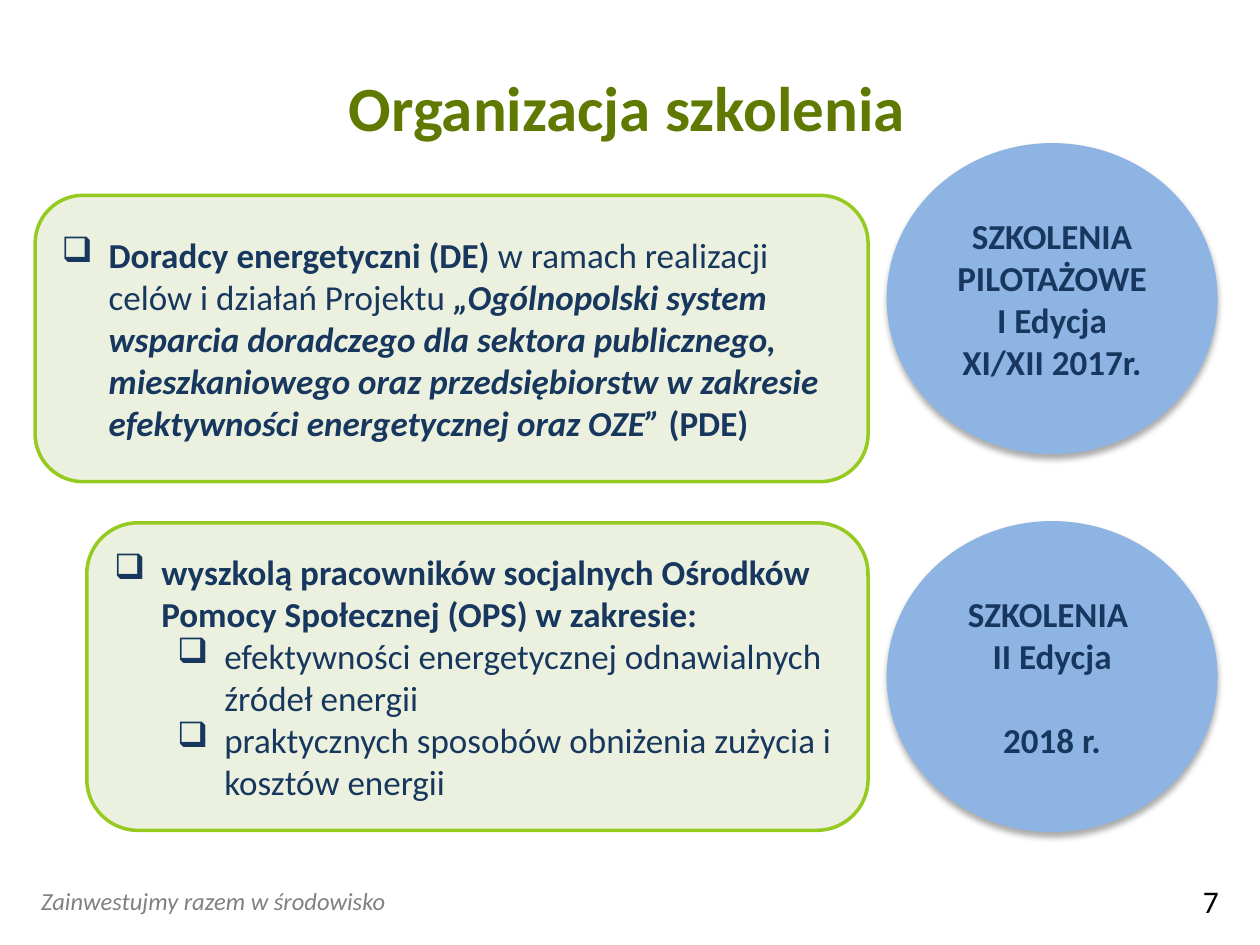
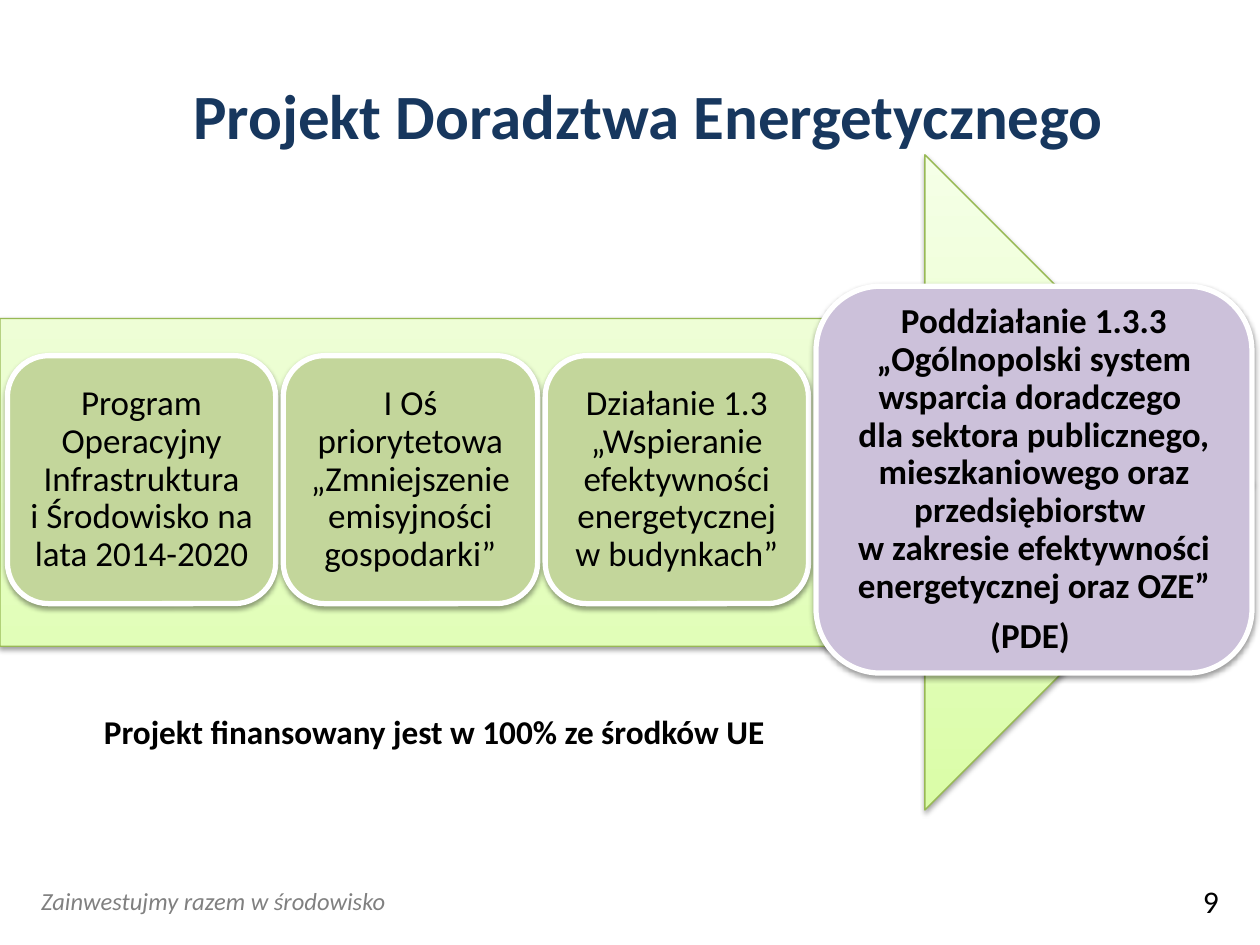
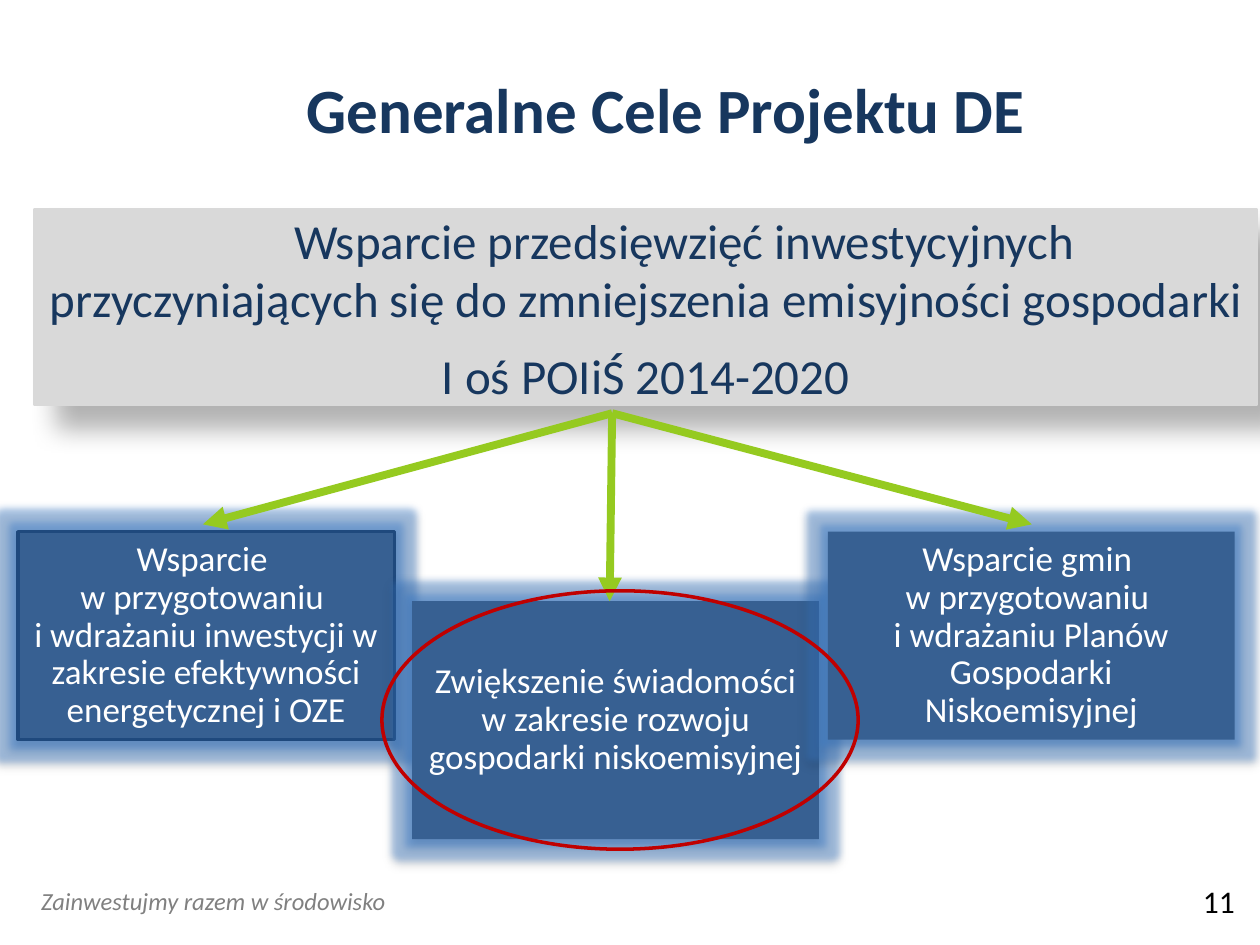
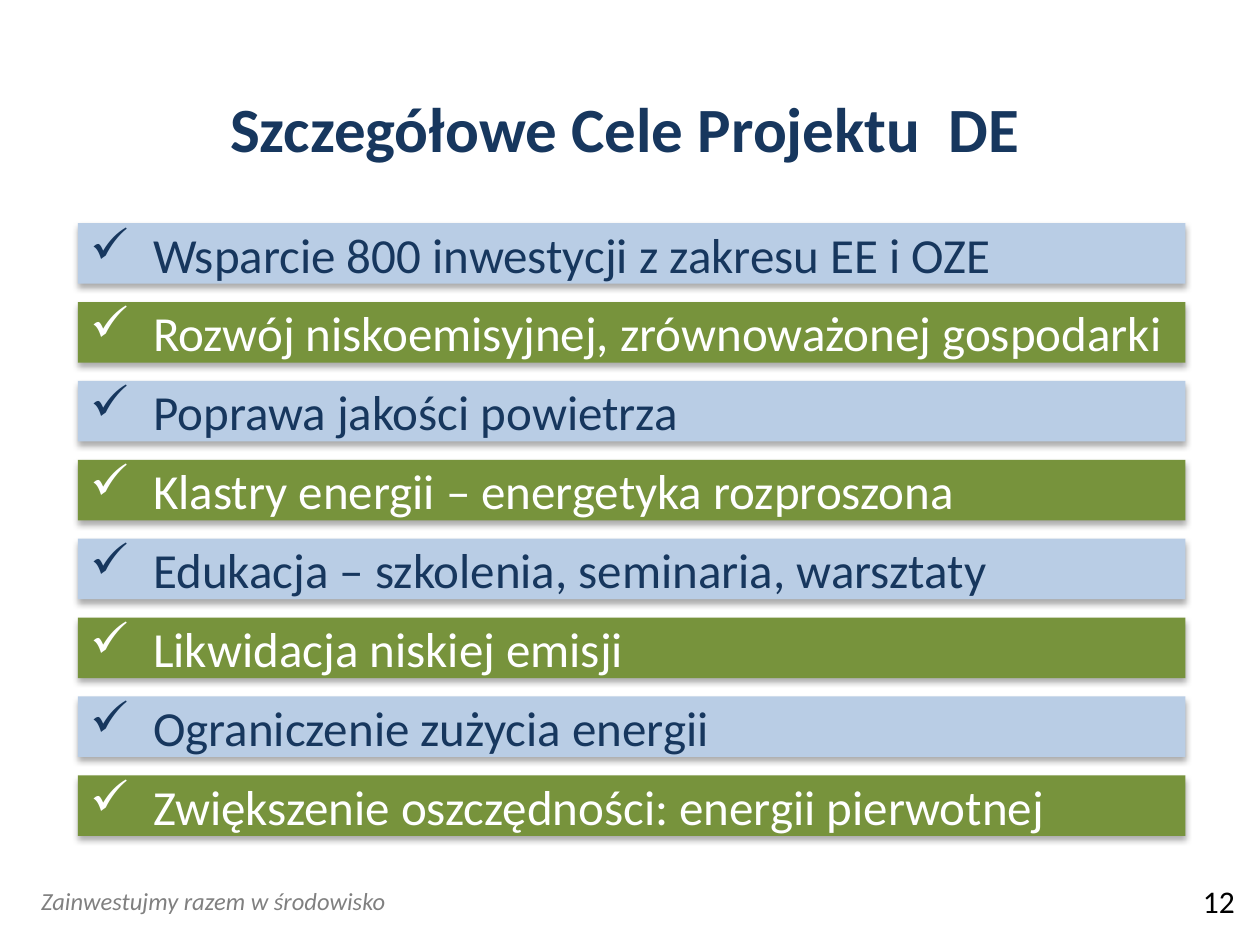
"""Build four slides on the energy advisory project and its training courses."""
from dataclasses import dataclass

import lxml.etree
import pptx
import pptx.dml.color
import pptx.enum.shapes
import pptx.enum.text
import pptx.oxml.ns
import pptx.util

Cm = pptx.util.Cm
Pt = pptx.util.Pt
ShapeType = pptx.enum.shapes.MSO_SHAPE
Align = pptx.enum.text.PP_ALIGN
Anchor = pptx.enum.text.MSO_ANCHOR
qn = pptx.oxml.ns.qn


@dataclass(frozen=True)
class Theme:
    font: str = "Calibri"
    navy: str = "17375E"
    olive: str = "5F7901"
    lime: str = "95CA20"
    pale_green: str = "EBF1DE"
    card_green: str = "C3D69B"
    card_purple: str = "CCC1DA"
    bar_green: str = "77933C"
    bar_blue: str = "B9CDE5"
    circle_blue: str = "8EB4E3"
    goal_blue: str = "376092"
    goal_edge: str = "1F497D"
    glow: str = "3A7CCB"
    banner_gray: str = "D9D9D9"
    footer_gray: str = "808080"
    arrow_edge: str = "98B955"
    arrow_dark: str = "DAFDA7"
    arrow_pale: str = "F5FFE7"
    red: str = "C00000"
    white: str = "FFFFFF"
    black: str = "000000"
    title_size: int = 36
    large_size: int = 28
    body_size: int = 20
    note_size: int = 19
    number_size: int = 18
    footer_size: int = 14


@dataclass(frozen=True)
class Shadow:
    opacity: int
    blur: float
    distance: float
    angle: int


@dataclass(frozen=True)
class Line:
    """Hold one paragraph: runs of (text, style letters) and its layout."""
    runs: tuple
    bullet: str = ""
    level: int = 0
    margin: float = 0
    indent: float = 0
    before: float = 0


THEME = Theme()
SOFT = Shadow(32, 3.5, 2.2, 90)
CARD = Shadow(38, 3.1, 1.6, 90)
DEEP = Shadow(30, 15, 18, 45)

FOOTER = "Zainwestujmy razem w środowisko"
FOOTER_BOX = (0.58, 17.73, 10.72, 0.86)
NUMBER_BOX = (24, 17.65, 1.4, 1.02)

HANGING = 0.95
TRAINING_BOXES = [
    ((1.75, 10.54, 15.75, 6.2), [
        Line((("wyszkolą pracowników socjalnych Ośrodków Pomocy Społecznej (OPS) w zakresie:", "b"),),
             "❑", 0, HANGING, -HANGING),
        Line((("efektywności energetycznej odnawialnych źródeł energii", ""),),
             "❑", 1, 2.22, -HANGING),
        Line((("praktycznych sposobów obniżenia zużycia i kosztów energii", ""),),
             "❑", 1, 2.22, -HANGING),
    ]),
    ((0.71, 3.94, 16.79, 5.77), [
        Line((("Doradcy energetyczni (DE) ", "b"),
              ("w ramach realizacji celów i działań Projektu ", ""),
              ("„Ogólnopolski system wsparcia doradczego dla sektora publicznego, mieszkaniowego "
               "oraz przedsiębiorstw w zakresie efektywności energetycznej oraz OZE” ", "bi"),
              ("(PDE)", "b")), "❑", 0, HANGING, -HANGING),
    ]),
]
TRAINING_CIRCLES = [
    (2.92, [Line((("SZKOLENIA PILOTAŻOWE", "b"),)), Line((("I Edycja", "b"),)),
            Line((("XI/XII 2017r.", "b"),))]),
    (10.54, [Line((("SZKOLENIA ", "b"),)), Line((("II Edycja", "b"),)),
             Line((("2018 r.", "b"),), before=24)]),
]

CARD_GAP = 0.15
CARD_MIDDLE = 9.67
PROGRAMME_CARDS = [
    (5.41, 5, THEME.card_green,
     [Line((("Program Operacyjny Infrastruktura\ni Środowisko na lata 2014-2020", ""),))]),
    (5.13, 5, THEME.card_green,
     [Line((("I Oś priorytetowa „Zmniejszenie emisyjności gospodarki”", ""),))]),
    (5.31, 5, THEME.card_green,
     [Line((("Działanie 1.3 „Wspieranie efektywności energetycznej\nw budynkach”", ""),))]),
    (8.79, 7.8, THEME.card_purple,
     [Line((("Poddziałanie 1.3.3 „Ogólnopolski system wsparcia doradczego \n"
             "dla sektora publicznego, mieszkaniowego oraz przedsiębiorstw \n"
             "w zakresie efektywności energetycznej oraz OZE”", "b"),)),
      Line((("(PDE) ", "b"),))]),
]
FUNDING_NOTE = "Projekt finansowany jest w 100% ze środków UE "

GENERAL_GOAL = [
    Line((("Wsparcie przedsięwzięć inwestycyjnych\n"
           "przyczyniających się do zmniejszenia emisyjności gospodarki", ""),), indent=1.55),
    Line((("I oś POIiŚ 2014-2020", ""),)),
]
GOAL_BOXES = [
    ((0.36, 10.72, 7.59, 4.19), THEME.goal_edge,
     "Wsparcie \nw przygotowaniu \ni wdrażaniu inwestycji w zakresie efektywności energetycznej i OZE"),
    ((8.31, 12.12, 8.2, 4.8), None,
     "Zwiększenie świadomości w zakresie rozwoju gospodarki niskoemisyjnej"),
    ((16.69, 10.72, 8.2, 4.19), None,
     "Wsparcie gmin \nw przygotowaniu \ni wdrażaniu Planów Gospodarki Niskoemisyjnej"),
]
GOAL_ARROW_START = (12.34, 8.33)
GOAL_ARROW_ENDS = [(4.09, 10.57), (12.29, 12.12), (20.8, 10.57)]

DETAILED_GOALS = [
    "Wsparcie 800 inwestycji z zakresu EE i OZE",
    "Rozwój niskoemisyjnej, zrównoważonej gospodarki",
    "Poprawa jakości powietrza",
    "Klastry energii – energetyka rozproszona",
    "Edukacja – szkolenia, seminaria, warsztaty",
    "Likwidacja niskiej emisji",
    "Ograniczenie zużycia energii",
    "Zwiększenie oszczędności: energii pierwotnej",
]
BAR_STYLES = [(THEME.bar_blue, THEME.navy), (THEME.bar_green, THEME.white)]
BAR_TOP, BAR_PITCH = 4.5, 1.59


def rgb(color):
    return pptx.dml.color.RGBColor.from_string(color)


def plain(text, style=""):
    return [Line(((text, style),))]


def write(shape, lines, size, color, align=Align.CENTER, anchor=Anchor.MIDDLE,
          spacing=None, after=0):
    frame = shape.text_frame
    frame.word_wrap = True
    frame.vertical_anchor = anchor
    for position, line in enumerate(lines):
        paragraph = frame.add_paragraph() if position else frame.paragraphs[0]
        properties = paragraph._p.get_or_add_pPr()
        properties.set("marL", str(Cm(line.margin)))
        properties.set("indent", str(Cm(line.indent)))
        if line.bullet:
            lxml.etree.SubElement(properties, qn("a:buChar")).set("char", line.bullet)
        paragraph.level = line.level
        paragraph.alignment = align
        paragraph.space_after = Pt(after)
        if spacing:
            paragraph.line_spacing = spacing
        if line.before:
            paragraph.space_before = Pt(line.before)
        for text, style in line.runs:
            for number, part in enumerate(text.split("\n")):
                if number:
                    paragraph.add_line_break()
                run = paragraph.add_run()
                run.text = part
                run.font.name = THEME.font
                run.font.size = Pt(size)
                run.font.color.rgb = rgb(color)
                run.font.bold = "b" in style
                run.font.italic = "i" in style


def add_color(parent, color, opacity):
    element = lxml.etree.SubElement(parent, qn("a:srgbClr"), val=color)
    lxml.etree.SubElement(element, qn("a:alpha"), val=str(opacity * 1000))


def add_effects(shape, shadow, glow=None):
    effects = shape._element.spPr.find(qn("a:effectLst"))
    if glow:
        add_color(lxml.etree.SubElement(effects, qn("a:glow"), rad=str(Pt(8))), glow, 40)
    outer = lxml.etree.SubElement(
        effects, qn("a:outerShdw"), blurRad=str(Pt(shadow.blur)), dist=str(Pt(shadow.distance)),
        dir=str(shadow.angle * 60000), algn="tl" if shadow.angle == 45 else "ctr", rotWithShape="0")
    add_color(outer, THEME.black, shadow.opacity)


def add_shape(slide, kind, box, fill=None, edge=None, width=2, shadow=None, glow=None):
    shape = slide.shapes.add_shape(kind, *map(Cm, box))
    shape.shadow.inherit = False
    if fill:
        shape.fill.solid()
        shape.fill.fore_color.rgb = rgb(fill)
    else:
        shape.fill.background()
    if edge:
        shape.line.color.rgb = rgb(edge)
        shape.line.width = Pt(width)
    else:
        shape.line.fill.background()
    if shadow:
        add_effects(shape, shadow, glow)
    return shape


def add_text(slide, box, lines, size, color, align=Align.LEFT):
    write(slide.shapes.add_textbox(*map(Cm, box)), lines, size, color, align, Anchor.TOP)


def add_arrow(slide, start, end):
    connector = slide.shapes.add_connector(
        pptx.enum.shapes.MSO_CONNECTOR.STRAIGHT, *map(Cm, start + end))
    connector.line.color.rgb = rgb(THEME.lime)
    connector.line.width = Pt(4.5)
    lxml.etree.SubElement(connector.line._get_or_add_ln(), qn("a:tailEnd"), type="triangle")
    lxml.etree.SubElement(connector._element.spPr, qn("a:effectLst"))


def add_slide(presentation, title, top, left, height, number, color=THEME.navy):
    slide = presentation.slides.add_slide(presentation.slide_layouts[5])
    heading = slide.shapes.title
    heading.left, heading.top, heading.width, heading.height = map(Cm, (left, top, 21.16, height))
    write(heading, plain(title, "b"), THEME.title_size, color)
    add_text(slide, FOOTER_BOX, plain(FOOTER, "i"), THEME.footer_size, THEME.footer_gray)
    add_text(slide, NUMBER_BOX, plain(str(number)), THEME.number_size, THEME.black)
    return slide


def build_training(presentation):
    slide = add_slide(presentation, "Organizacja szkolenia", 0.91, 2.06, 2.46, 7, THEME.olive)
    for box, lines in TRAINING_BOXES:
        panel = add_shape(slide, ShapeType.ROUNDED_RECTANGLE, box, THEME.pale_green, THEME.lime)
        write(panel, lines, THEME.body_size, THEME.navy, Align.LEFT)
    for top, lines in TRAINING_CIRCLES:
        circle = add_shape(slide, ShapeType.OVAL, (17.91, top, 6.6, 6.2),
                           THEME.circle_blue, THEME.circle_blue, shadow=SOFT)
        write(circle, lines, THEME.body_size, THEME.navy)


def build_programme(presentation):
    slide = add_slide(presentation, "Projekt Doradztwa Energetycznego", 0.71, 2.49, 3.18, 9)
    arrow = add_shape(slide, ShapeType.RIGHT_ARROW, (0, 3.12, 25.25, 13.21),
                      THEME.arrow_dark, THEME.arrow_edge, 0.75, CARD)
    arrow.fill.gradient()
    arrow.fill.gradient_angle = 90
    for stop, color in zip(arrow.fill.gradient_stops, (THEME.arrow_dark, THEME.arrow_pale)):
        stop.color.rgb = rgb(color)
    left = CARD_GAP
    for width, height, fill, lines in PROGRAMME_CARDS:
        card = add_shape(slide, ShapeType.ROUNDED_RECTANGLE,
                         (left, CARD_MIDDLE - height / 2, width, height),
                         fill, THEME.white, 3, CARD)
        frame = card.text_frame
        frame.margin_left = frame.margin_right = frame.margin_top = frame.margin_bottom = Cm(0.1)
        write(card, lines, THEME.body_size, THEME.black, spacing=0.9, after=7)
        left += width + CARD_GAP
    add_text(slide, (0.03, 14.22, 17.6, 1.07), plain(FUNDING_NOTE, "b"),
             THEME.note_size, THEME.black, Align.CENTER)


def build_general_goals(presentation):
    slide = add_slide(presentation, "Generalne Cele Projektu DE", 1.19, 2.84, 1.98, 11)
    for box, edge, text in GOAL_BOXES:
        goal = add_shape(slide, ShapeType.RECTANGLE, box, THEME.goal_blue, edge,
                         shadow=SOFT, glow=THEME.glow)
        write(goal, plain(text), THEME.body_size, THEME.white, spacing=0.9, after=7)
    banner = add_shape(slide, ShapeType.RECTANGLE, (0.71, 4.22, 24.61, 3.94),
                       THEME.banner_gray, THEME.banner_gray, shadow=DEEP)
    write(banner, GENERAL_GOAL, THEME.large_size, THEME.navy, after=10)
    for end in GOAL_ARROW_ENDS:
        add_arrow(slide, GOAL_ARROW_START, end)
    add_shape(slide, ShapeType.OVAL, (7.7, 11.91, 9.6, 5.21), edge=THEME.red)


def build_detailed_goals(presentation):
    slide = add_slide(presentation, "Szczegółowe Cele Projektu  DE ", 1.47, 2.16, 2.18, 12)
    for row, text in enumerate(DETAILED_GOALS):
        fill, color = BAR_STYLES[row % 2]
        bar = add_shape(slide, ShapeType.RECTANGLE,
                        (1.57, BAR_TOP + row * BAR_PITCH, 22.33, 1.22), fill, shadow=SOFT)
        write(bar, [Line(((text, ""),), "✓", 0, 1.27, -1.27)],
              THEME.large_size, color, Align.LEFT, after=10)


def main():
    presentation = pptx.Presentation()
    presentation.slide_width, presentation.slide_height = Cm(25.4), Cm(19.05)
    build_training(presentation)
    build_programme(presentation)
    build_general_goals(presentation)
    build_detailed_goals(presentation)
    presentation.save("out.pptx")


if __name__ == "__main__":
    main()
